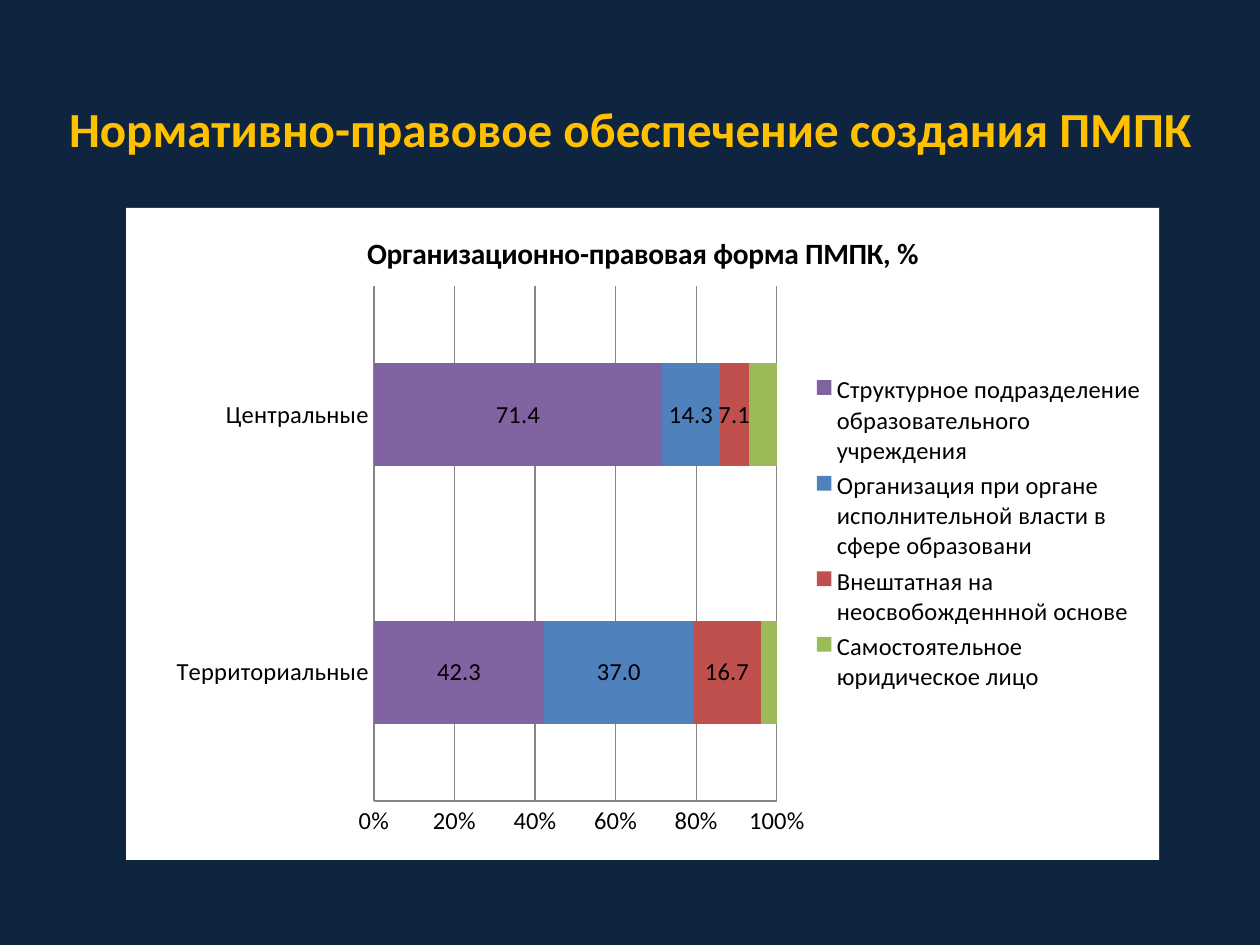
from dataclasses import dataclass

from lxml import etree
from pptx import Presentation, util as u
from pptx.chart.data import CategoryChartData
from pptx.dml.color import RGBColor
from pptx.enum import chart as ch, text
from pptx.oxml import parse_xml
from pptx.oxml.ns import nsdecls, qn

WIDTH, HEIGHT = u.Inches(10), u.Inches(7.5)
FONT = "Calibri"
NUMBER_FORMAT = "###0.0"


@dataclass
class Box:
    """A rectangle in shares of its container."""
    x: float
    y: float
    w: float
    h: float

    def on_slide(self) -> list[int]:
        return [int(self.x * WIDTH), int(self.y * HEIGHT),
                int(self.w * WIDTH), int(self.h * HEIGHT)]


@dataclass
class LegalForm:
    name: str
    shares: tuple[float, float]
    color: str
    labelled: bool = True


CATEGORIES = ("Территориальные", "Центральные")
FORMS = (
    LegalForm("Структурное подразделение образовательного учреждения",
              (42.3, 71.4), "8064A2"),
    LegalForm("Организация при органе исполнительной власти в сфере образовани",
              (37, 14.3), "4F81BD"),
    LegalForm("Внештатная на неосвобожденнной основе", (16.7, 7.1), "C0504D"),
    LegalForm("Самостоятельное юридическое лицо", (4, 7), "9BBB59", False),
)


def rgb(color: str) -> RGBColor:
    return RGBColor.from_string(color)


def style_font(font, size: float, color: str, bold: bool = False) -> None:
    font.name, font.size, font.bold = FONT, u.Pt(size), bold
    font.color.rgb = rgb(color)


def add_heading(s, box: Box, words: str) -> None:
    tf = s.shapes.add_textbox(*box.on_slide()).text_frame
    tf.word_wrap = True
    tf.vertical_anchor = text.MSO_ANCHOR.MIDDLE
    p = tf.paragraphs[0]
    p.text = words
    p.alignment = text.PP_ALIGN.CENTER
    style_font(p.font, 28, "FFC000", bold=True)


def fill_chart_area(chart, color: str) -> None:
    area = parse_xml(
        f'<c:spPr {nsdecls("c", "a")}><a:solidFill><a:srgbClr val="{color}"/>'
        '</a:solidFill><a:ln><a:noFill/></a:ln></c:spPr>')
    chart.element.find(qn("c:chart")).addnext(area)


def place_plot(chart, box: Box) -> None:
    plot_area = chart.element.find(".//" + qn("c:plotArea"))
    for old in plot_area.findall(qn("c:layout")):
        plot_area.remove(old)
    layout = parse_xml(f'<c:layout {nsdecls("c")}><c:manualLayout/></c:layout>')
    settings = {"layoutTarget": "inner", "xMode": "edge", "yMode": "edge",
                "x": box.x, "y": box.y, "w": box.w, "h": box.h}
    for tag, value in settings.items():
        etree.SubElement(layout[0], qn(f"c:{tag}")).set("val", str(value))
    plot_area.insert(0, layout)


def style_axis(axis) -> None:
    axis.major_tick_mark = axis.minor_tick_mark = ch.XL_TICK_MARK.NONE
    style_line(axis.format.line)


def style_line(line) -> None:
    line.color.rgb = rgb("868686")
    line.width = u.Pt(0.75)


def add_forms_chart(s, box: Box, plot_box: Box) -> None:
    data = CategoryChartData(number_format=NUMBER_FORMAT)
    data.categories = CATEGORIES
    for form in FORMS:
        data.add_series(form.name, form.shares)
    chart = s.shapes.add_chart(ch.XL_CHART_TYPE.BAR_STACKED_100,
                               *box.on_slide(), data).chart
    style_font(chart.font, 14, "000000")
    fill_chart_area(chart, "FFFFFF")
    place_plot(chart, plot_box)

    # Chart title and legend
    p = chart.chart_title.text_frame.paragraphs[0]
    p.text = "Организационно-правовая форма ПМПК, %"
    style_font(p.font, 16.8, "000000", bold=True)
    chart.chart_title.include_in_layout = False
    chart.has_legend = True
    chart.legend.position = ch.XL_LEGEND_POSITION.RIGHT
    chart.legend.include_in_layout = False

    # Axes
    style_axis(chart.category_axis)
    style_axis(chart.value_axis)
    chart.value_axis.has_major_gridlines = True
    style_line(chart.value_axis.major_gridlines.format.line)
    chart.value_axis.tick_labels.number_format = "0%"
    chart.value_axis.tick_labels.number_format_is_linked = False

    # Bars
    plot = chart.plots[0]
    plot.gap_width, plot.overlap = 150, 100
    plot.vary_by_categories = False
    for series, form in zip(plot.series, FORMS):
        series.format.fill.solid()
        series.format.fill.fore_color.rgb = rgb(form.color)
        if form.labelled:
            labels = series.data_labels
            labels.show_value = True
            labels.number_format = NUMBER_FORMAT
            labels.number_format_is_linked = False


def main() -> None:
    prs = Presentation()
    prs.slide_width, prs.slide_height = WIDTH, HEIGHT
    s = prs.slides.add_slide(prs.slide_layouts[6])
    s.background.fill.solid()
    s.background.fill.fore_color.rgb = rgb("0F243E")

    add_heading(s, Box(0.035, 0.05, 0.93, 0.17),
                "Нормативно-правовое обеспечение создания ПМПК")
    add_forms_chart(s, Box(0.1, 0.22, 0.82, 0.69), Box(0.24, 0.12, 0.39, 0.79))
    prs.save("out.pptx")


if __name__ == "__main__":
    main()
